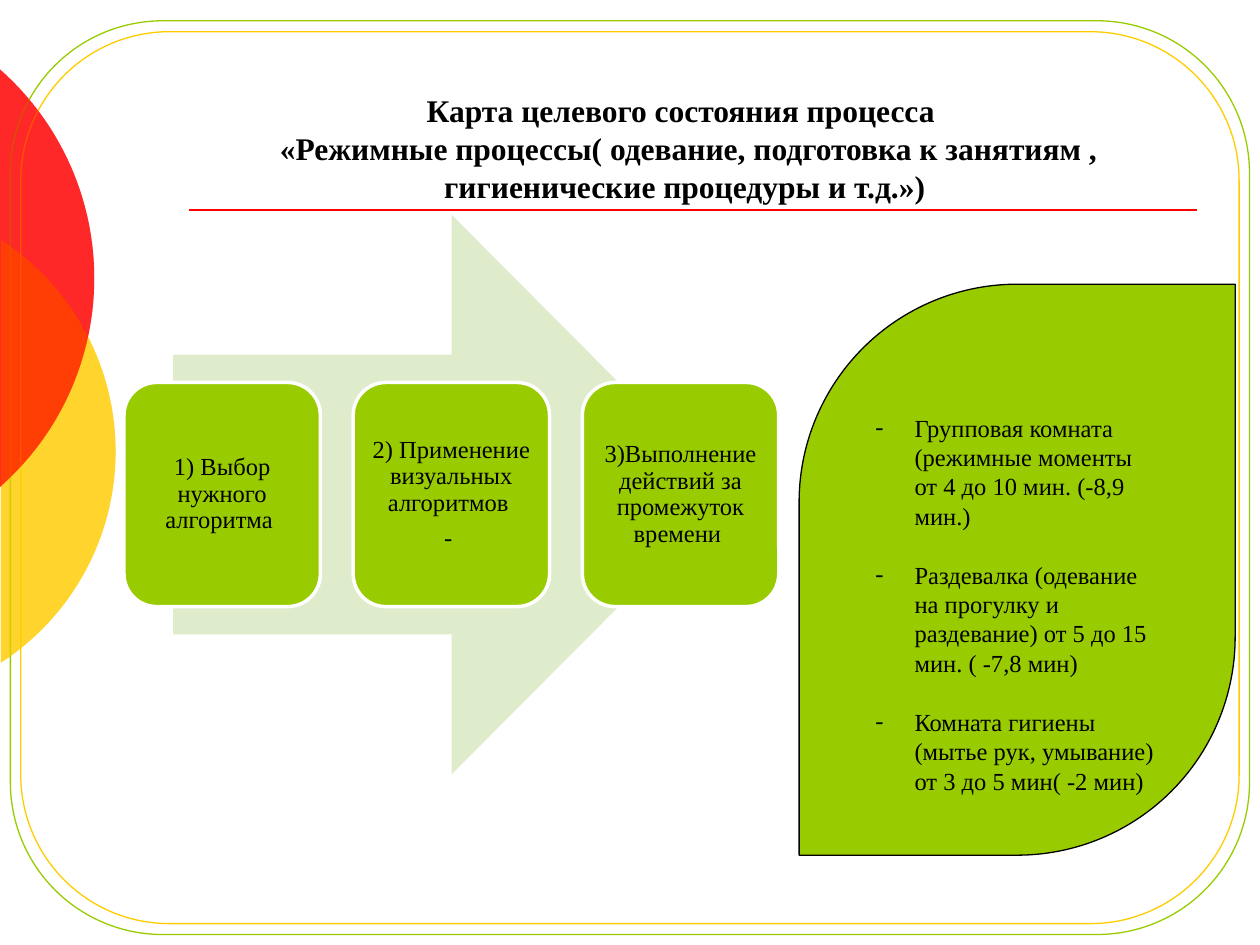
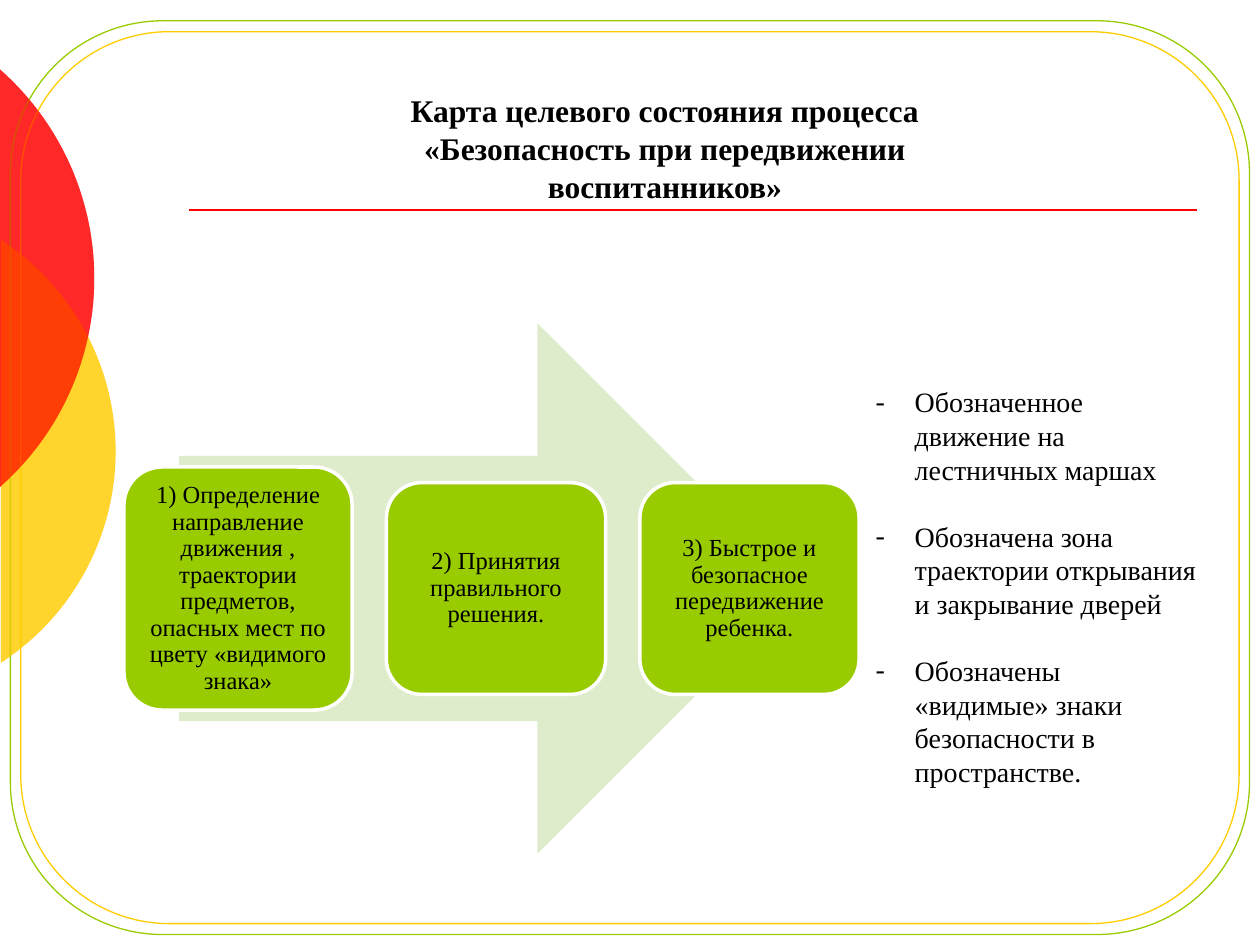
from math import acos, cos, sin, tan

from lxml import etree
from pptx import Presentation
from pptx.dml.color import RGBColor
from pptx.enum.shapes import MSO_CONNECTOR, MSO_SHAPE
from pptx.enum.text import MSO_ANCHOR, PP_ALIGN
from pptx.oxml.ns import qn
from pptx.util import Cm, Pt

ROUND, ARROW = MSO_SHAPE.ROUNDED_RECTANGLE, MSO_SHAPE.RIGHT_ARROW
LEAF, LINE = MSO_SHAPE.ROUND_2_DIAG_RECTANGLE, MSO_CONNECTOR.STRAIGHT
TOP, MIDDLE = MSO_ANCHOR.TOP, MSO_ANCHOR.MIDDLE
LEFT, CENTER = PP_ALIGN.LEFT, PP_ALIGN.CENTER

# Shared colours and text formats
rgb = RGBColor.from_string
GREEN, GOLD, RED = "99CC00", "FFCC00", "FF0000"
PALE, WHITE, BLACK = "DEECCC", "FFFFFF", "000000"
FONT = "Times New Roman"
TITLE = {
    "frame": {"word_wrap": True, "vertical_anchor": TOP},
    "para": {"alignment": CENTER},
    "font": {"size": Pt(18), "bold": True},
}
NODE = {
    "frame": {"word_wrap": True, "vertical_anchor": MIDDLE,
              "margin_left": Cm(0.15), "margin_right": Cm(0.15),
              "margin_top": Cm(0.15), "margin_bottom": Cm(0.15)},
    "para": {"alignment": CENTER, "line_spacing": 0.9, "space_after": Pt(5)},
    "font": {"size": Pt(14)},
}

# Disc: left, top, radius, x of the cut, colour, opacity in percent
DISCS = [(-7.83, 4.02, 5.08, 0.02, GOLD, 58), (-9.32, 0, 5.61, -0.02, RED, 60)]
FRAMES = [(0.21, 0.42, 24.98, 18.42, GREEN), (0.42, 0.64, 24.56, 17.98, GOLD)]
EDGE = 2.5

# What differs from slide to slide; a node is width, height, lines
PAGES = [
    {
        "title": ["Карта целевого состояния процесса ",
                  " «Режимные процессы( одевание, подготовка к занятиям , "
                  "гигиенические процедуры и т.д.»)"],
        "head": (3.71, 1.72, 20.19, 3.33),
        "arrow": (3.49, 4.33, 11.23, 11.28),
        "nodes": [
            (3.96, 4.52, ["1) Выбор нужного алгоритма "]),
            (3.96, 4.52, ["2) Применение визуальных алгоритмов ", "- "]),
            (3.96, 4.52, ["3)Выполнение действий за промежуток времени "]),
        ],
        "gap": 0.66,
        "leaf": True,
        "notes": (16.11, 5.73, 8.79, 11.51),
        "size": 14,
        "inset": 1.3,
        "list": ["Групповая комната (режимные моменты от 4 до 10 мин. (-8,9 мин.)",
                 "Раздевалка (одевание на прогулку и раздевание) от 5 до 15 мин. "
                 "( -7,8 мин)",
                 "Комната гигиены (мытье рук, умывание) от 3 до 5 мин( -2 мин)"],
    },
    {
        "title": ["Карта целевого состояния процесса «Безопасность при "
                  "передвижении воспитанников»"],
        "head": (7.5, 1.72, 11.81, 2.57),
        "arrow": (3.61, 6.52, 12.57, 10.69),
        "nodes": [
            (4.6, 4.9, ["1) Определение направление движения , траектории "
                        "предметов, опасных мест по цвету «видимого знака»"]),
            (4.42, 4.27, ["2) Принятия правильного решения."]),
            (4.42, 4.27, ["3) Быстрое и безопасное передвижение ребенка."]),
        ],
        "gap": 0.69,
        "leaf": False,
        "notes": (17.4, 7.63, 7.01, 8.46),
        "size": 16,
        "inset": 0.13,
        "list": ["Обозначенное движение на лестничных маршах",
                 "Обозначена зона траектории открывания и закрывание дверей",
                 "Обозначены «видимые» знаки безопасности в пространстве."],
    },
]


def paint(shape, fill=None, line=None, width=0.75):
    shape.shadow.inherit = False
    if fill:
        shape.fill.solid()
        shape.fill.fore_color.rgb = rgb(fill)
    else:
        shape.fill.background()
    if line:
        shape.line.color.rgb = rgb(line)
        shape.line.width = Pt(width)
    else:
        shape.line.fill.background()


def write(shape, lines, look, mark=None):
    frame = shape.text_frame
    for key, val in look["frame"].items():
        setattr(frame, key, val)
    for i, text in enumerate(lines):
        para = frame.add_paragraph() if i else frame.paragraphs[0]
        for key, val in look["para"].items():
            setattr(para, key, val)
        run = para.add_run()
        run.text = text
        run.font.name = FONT
        run.font.color.rgb = rgb(BLACK)
        for key, val in look["font"].items():
            setattr(run.font, key, val)
        if mark:
            props = para._p.get_or_add_pPr()
            props.set("marL", str(Cm(0.79)))
            props.set("indent", str(-Cm(0.79)))
            etree.SubElement(props, qn("a:buFont")).set("typeface", FONT)
            etree.SubElement(props, qn("a:buChar")).set("char", mark)


deck = Presentation()
deck.slide_width, deck.slide_height = Cm(25.4), Cm(19.05)

for page in PAGES:
    shapes = deck.slides.add_slide(deck.slide_layouts[6]).shapes

    # Discs cut by the left edge, below and above the frames
    for layer in range(2):
        for left, top, r, cut, color, alpha in DISCS:
            pen = shapes.build_freeform(Cm(left), Cm(top))
            far, low = Cm(left + 2 * r), Cm(top + 2 * r)
            pen.add_line_segments([(far, Cm(top)), (far, low), (Cm(left), low)])
            disc = pen.convert_to_shape()
            paint(disc, color)
            tint = disc._element.spPr.find(qn("a:solidFill"))[0]
            etree.SubElement(tint, qn("a:alpha")).set("val", str(alpha * 1000))

            # Two curves round the visible arc, closed by a straight cut
            half = acos((cut - left - r) / r)
            pull = 4 / 3 * tan(half / 4)
            ax, ay = cos(half), sin(half)
            bx, by = ax + pull * ay, ay - pull * ax
            arcs = [("moveTo", [(ax, -ay)]),
                    ("cubicBezTo", [(bx, -by), (1, -pull), (1, 0)]),
                    ("cubicBezTo", [(1, pull), (bx, by), (ax, ay)]),
                    ("close", [])]
            trace = next(disc._element.iter(qn("a:path")))
            for old in list(trace):
                trace.remove(old)
            for kind, dots in arcs:
                part = etree.SubElement(trace, qn("a:" + kind))
                for x, y in dots:
                    dot = etree.SubElement(part, qn("a:pt"))
                    dot.set("x", str(Cm(r + r * x)))
                    dot.set("y", str(Cm(r + r * y)))

        # Frames and title rule
        if layer == 0:
            for *box, color in FRAMES:
                paint(shapes.add_shape(ROUND, *map(Cm, box)), line=color)
            rule = shapes.add_connector(LINE, Cm(3.81), Cm(4.24), Cm(24.13), Cm(4.24))
            rule.line.color.rgb = rgb(RED)
            rule.line.width = Pt(1)
            etree.SubElement(rule._element.spPr, qn("a:effectLst"))

    # Arrow with the steps centred on it
    left, top, wide, high = page["arrow"]
    paint(shapes.add_shape(ARROW, Cm(left), Cm(top), Cm(wide), Cm(high)), PALE)
    mid, x = top + high / 2, EDGE
    for wide, high, lines in page["nodes"]:
        node = shapes.add_shape(ROUND, Cm(x), Cm(mid - high / 2), Cm(wide), Cm(high))
        paint(node, GREEN, WHITE, 2)
        write(node, lines, NODE)
        x += wide + page["gap"]

    # Results list, in a leaf or plain
    place = map(Cm, page["notes"])
    if page["leaf"]:
        notes = shapes.add_shape(LEAF, *place)
        notes.adjustments[0] = 0.5
        paint(notes, GREEN, BLACK)
    else:
        notes = shapes.add_textbox(*place)
    size = page["size"]
    look = {
        "frame": {"word_wrap": True, "vertical_anchor": TOP,
                  "margin_top": Cm(page["inset"])},
        "para": {"alignment": LEFT, "space_after": Pt(1.2 * size)},
        "font": {"size": Pt(size)},
    }
    write(notes, page["list"], look, "-")

    # Title
    write(shapes.add_textbox(*map(Cm, page["head"])), page["title"], TITLE)

deck.save("out.pptx")
